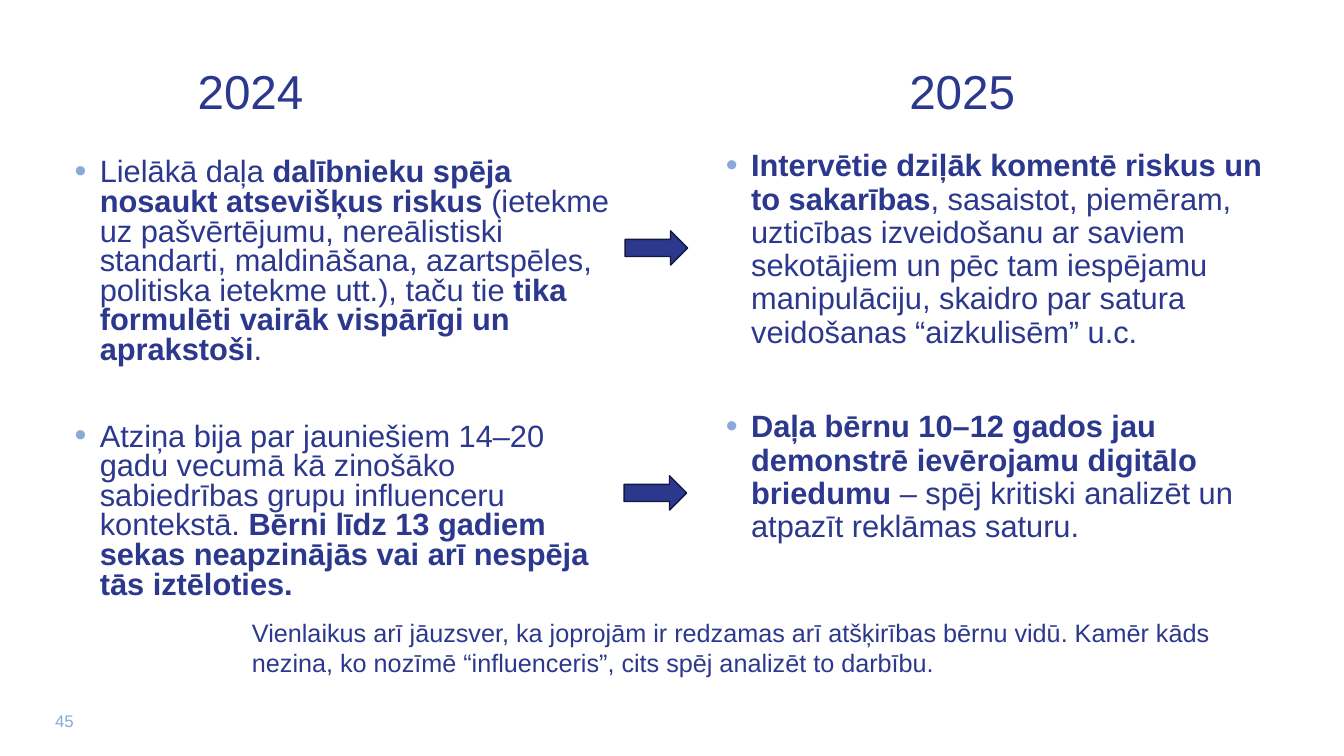
from lxml.etree import SubElement
from pptx import Presentation
from pptx.dml.color import RGBColor
from pptx.enum.shapes import MSO_SHAPE
from pptx.enum.text import MSO_ANCHOR, MSO_AUTO_SIZE, PP_ALIGN
from pptx.oxml.ns import qn
from pptx.util import Inches, Pt

NAVY = RGBColor(0x2B, 0x38, 0x8D)
DARK = RGBColor(0x13, 0x19, 0x3E)
LIGHT = RGBColor(0x89, 0xA9, 0xD8)

prs = Presentation()
prs.slide_width, prs.slide_height = Inches(13.33), Inches(7.5)
s = prs.slides.add_slide(prs.slide_layouts[3])


def write(sp, box, paragraphs, size, color=NAVY, anchor=MSO_ANCHOR.TOP,
          align=PP_ALIGN.LEFT, spacing=1.0, gap=0, bullets=False):
    sp.left, sp.top, sp.width, sp.height = map(Inches, box)
    tf = sp.text_frame
    frame = dict(word_wrap=True, auto_size=MSO_AUTO_SIZE.NONE, vertical_anchor=anchor)
    for name, value in frame.items():
        setattr(tf, name, value)
    for i, runs in enumerate(paragraphs):
        p = tf.add_paragraph() if i else tf.paragraphs[0]
        if bullets:
            add_bullet(p)
        layout = dict(alignment=align, line_spacing=spacing,
                      space_before=Pt(gap if i else 0), space_after=Pt(0))
        for name, value in layout.items():
            setattr(p, name, value)
        for text, bold in runs:
            r = p.add_run()
            r.text = text
            for name, value in dict(name="Arial", size=Pt(size), bold=bold).items():
                setattr(r.font, name, value)
            r.font.color.rgb = color


def add_bullet(p):
    pPr = p._p.get_or_add_pPr()
    pPr.set("marL", str(Inches(0.25)))
    pPr.set("indent", str(-Inches(0.25)))
    SubElement(SubElement(pPr, qn("a:buClr")), qn("a:srgbClr"), val=str(LIGHT))
    SubElement(pPr, qn("a:buSzPct"), val="110000")
    SubElement(pPr, qn("a:buFont"), typeface="Arial")
    SubElement(pPr, qn("a:buChar"), char="•")


points_2024 = [
    [("Lielākā daļa ", False),
     ("dalībnieku spēja nosaukt atsevišķus riskus ", True),
     ("(ietekme uz pašvērtējumu, nereālistiski standarti, maldināšana, "
      "azartspēles, politiska ietekme utt.), taču tie ", False),
     ("tika formulēti vairāk vispārīgi un aprakstoši", True),
     (".", False)],
    [("Atziņa bija par jauniešiem 14–20 gadu vecumā kā zinošāko sabiedrības "
      "grupu influenceru kontekstā. ", False),
     ("Bērni līdz 13 gadiem sekas neapzinājās vai arī nespēja tās iztēloties.", True)],
]
points_2025 = [
    [("Intervētie dziļāk komentē riskus un to sakarības", True),
     (", sasaistot, piemēram, uzticības izveidošanu ar saviem sekotājiem un pēc tam "
      "iespējamu manipulāciju, skaidro par satura veidošanas “aizkulisēm” u.c.", False)],
    [("Daļa bērnu 10–12 gados jau demonstrē ievērojamu digitālo briedumu ", True),
     ("– spēj kritiski analizēt un atpazīt reklāmas saturu.", False)],
]
remark = ("Vienlaikus arī jāuzsver, ka joprojām ir redzamas arī atšķirības bērnu vidū. "
          "Kamēr kāds nezina, ko nozīmē “influenceris”, cits spēj analizēt to darbību.")

title, left, right = s.placeholders
heading, note, number = [s.shapes.add_textbox(0, 0, 0, 0) for _ in range(3)]

for sp, x, year in [(title, 1.86, "2024"), (heading, 8.92, "2025")]:
    write(sp, (x, 0.33, 2.73, 1.2), [[(year, False)]], 34,
          anchor=MSO_ANCHOR.MIDDLE, spacing=0.9)

for sp, x, y, points, spacing, gap in [
    (left, 0.64, 1.53, points_2024, 0.8, 41),
    (right, 7.1, 1.44, points_2025, 0.9, 44),
]:
    write(sp, (x, y, 5.56, 4.9), points, 22, spacing=spacing, gap=gap, bullets=True)

write(note, (2.4, 6.07, 9.72, 0.71), [[(remark, False)]], 18)
write(number, (0.28, 7.01, 0.72, 0.29), [[("45", False)]], 12, color=LIGHT,
      anchor=MSO_ANCHOR.MIDDLE, align=PP_ALIGN.CENTER)

for x, y in [(6.2, 2.29), (6.19, 4.72)]:
    arrow = s.shapes.add_shape(MSO_SHAPE.RIGHT_ARROW, Inches(x), Inches(y),
                               Inches(0.62), Inches(0.34))
    arrow.shadow.inherit = False
    arrow.fill.solid()
    arrow.fill.fore_color.rgb = NAVY
    arrow.line.color.rgb = DARK
    arrow.line.width = Pt(1)

prs.save("out.pptx")
